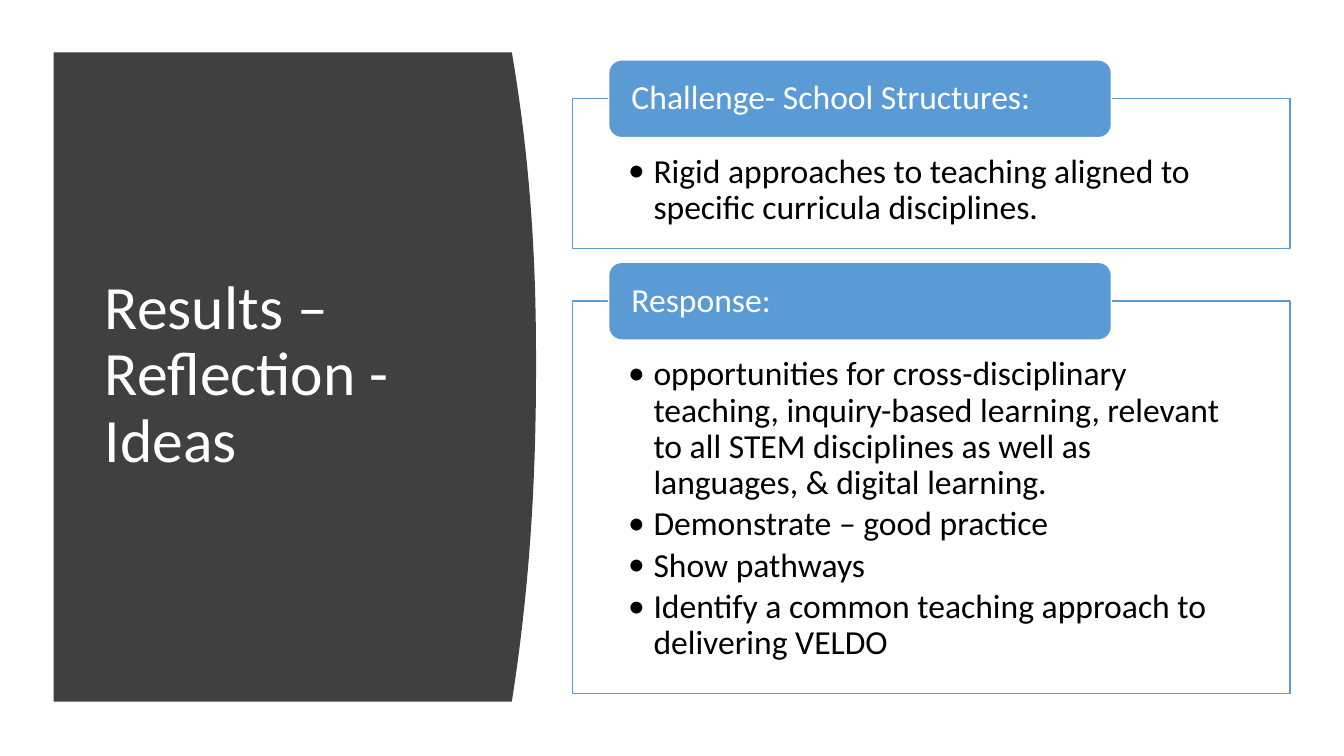
from lxml import etree
from pptx import Presentation
from pptx.dml.color import RGBColor
from pptx.enum.shapes import MSO_SHAPE
from pptx.enum.text import MSO_ANCHOR, MSO_AUTO_SIZE, PP_ALIGN
from pptx.oxml.ns import qn
from pptx.util import Cm, Pt

RECTANGLE = MSO_SHAPE.RECTANGLE
ROUNDED = MSO_SHAPE.ROUNDED_RECTANGLE
TOP, MIDDLE = MSO_ANCHOR.TOP, MSO_ANCHOR.MIDDLE
LEFT = PP_ALIGN.LEFT
NO_AUTOFIT = MSO_AUTO_SIZE.NONE

TITLE_ONLY = 5
FONT = "Calibri"
WHITE, BLACK, BLUE, CHARCOAL = "FFFFFF", "000000", "5B9BD5", "404040"
HEADER_RISE = 0.98
SECTIONS = [
    ("Challenge- School Structures:", 2.49, 3.78, [
        "Rigid approaches to teaching aligned to specific curricula disciplines.",
    ]),
    ("Response:", 7.59, 9.88, [
        "opportunities for cross-disciplinary teaching, inquiry-based learning, "
        "relevant to all STEM disciplines as well as languages, & digital learning.",
        "Demonstrate – good practice",
        "Show pathways",
        "Identify a common teaching approach to delivering VELDO",
    ]),
]


def colour(value):
    return RGBColor.from_string(value)


def set_attributes(target, values):
    for name, value in values.items():
        setattr(target, name, value)


def paint(shape, fill, line=None):
    shape.shadow.inherit = False
    shape.fill.solid()
    shape.fill.fore_color.rgb = colour(fill)
    if line:
        shape.line.color.rgb = colour(line)
        shape.line.width = Pt(1)
    else:
        shape.line.fill.background()


def write(shape, texts, size, text_colour, frame_format):
    frame = shape.text_frame
    set_attributes(frame, {"word_wrap": True, "auto_size": NO_AUTOFIT, **frame_format})
    frame.text = "\n".join(texts)
    for para in frame.paragraphs:
        set_attributes(para, {"alignment": LEFT, "line_spacing": 0.9})
        set_attributes(para.font, {"name": FONT, "size": Pt(size)})
        for span in para.runs:
            set_attributes(span.font, {"name": FONT, "size": Pt(size)})
            span.font.color.rgb = colour(text_colour)


def add_bullet(para):
    set_attributes(para, {"level": 1, "space_after": Pt(3.6)})
    properties = para._p.get_or_add_pPr()
    properties.set("marL", str(Cm(0.64)))
    properties.set("indent", str(-Cm(0.64)))
    bullet_font = etree.Element(qn("a:buFont"), typeface=FONT)
    properties.find(qn("a:spcAft")).addnext(bullet_font)
    bullet_font.addnext(etree.Element(qn("a:buChar"), char="•"))


def add_curved_panel(slide):
    """Draw the dark panel, whose right side bulges most at its widest height."""
    left, top, bottom = 1.35, 1.32, 17.68
    edge, bulge, widest, steps = 12.9, 0.61, 9.14, 40
    points = []
    for step in range(steps + 1):
        y = top + (bottom - top) * step / steps
        reach = widest - top if y < widest else bottom - widest
        x = edge + bulge * (1 - (abs(y - widest) / reach) ** 2.2)
        points.append((Cm(x), Cm(y)))
    builder = slide.shapes.build_freeform(Cm(left), Cm(top))
    builder.add_line_segments(points + [(Cm(left), Cm(bottom))], close=True)
    panel = builder.convert_to_shape()
    paint(panel, CHARCOAL)
    return panel


def place_title(slide, panel):
    title = slide.shapes.title
    set_attributes(title, {"left": Cm(2.39), "top": Cm(2.82),
                           "width": Cm(9.5), "height": Cm(13.31)})
    write(title, ["Results – Reflection - Ideas"], 44, WHITE,
          {"vertical_anchor": MIDDLE})
    title.element.addprevious(panel.element)


def add_section(slide, heading, top, height, items):
    box = slide.shapes.add_shape(RECTANGLE, Cm(14.43), Cm(top), Cm(18.08), Cm(height))
    paint(box, WHITE, BLUE)
    fill_colour = box.element.spPr.find(qn("a:solidFill"))[0]
    etree.SubElement(fill_colour, qn("a:alpha"), val="90000")
    write(box, items, 24, BLACK, {
        "vertical_anchor": TOP, "margin_left": Cm(1.4), "margin_top": Cm(1.4),
        "margin_right": Cm(1.4), "margin_bottom": Cm(0.48)})
    for para in box.text_frame.paragraphs:
        add_bullet(para)

    header = slide.shapes.add_shape(
        ROUNDED, Cm(15.34), Cm(top - HEADER_RISE), Cm(12.67), Cm(1.96))
    paint(header, BLUE, WHITE)
    write(header, [heading], 24, WHITE, {
        "vertical_anchor": MIDDLE, "margin_left": Cm(0.48), "margin_top": 0,
        "margin_right": Cm(0.48), "margin_bottom": 0})


def main():
    deck = Presentation()
    deck.slide_width, deck.slide_height = Cm(33.87), Cm(19.05)
    slide = deck.slides.add_slide(deck.slide_layouts[TITLE_ONLY])
    panel = add_curved_panel(slide)
    place_title(slide, panel)
    for section in SECTIONS:
        add_section(slide, *section)
    deck.save("out.pptx")


if __name__ == "__main__":
    main()
